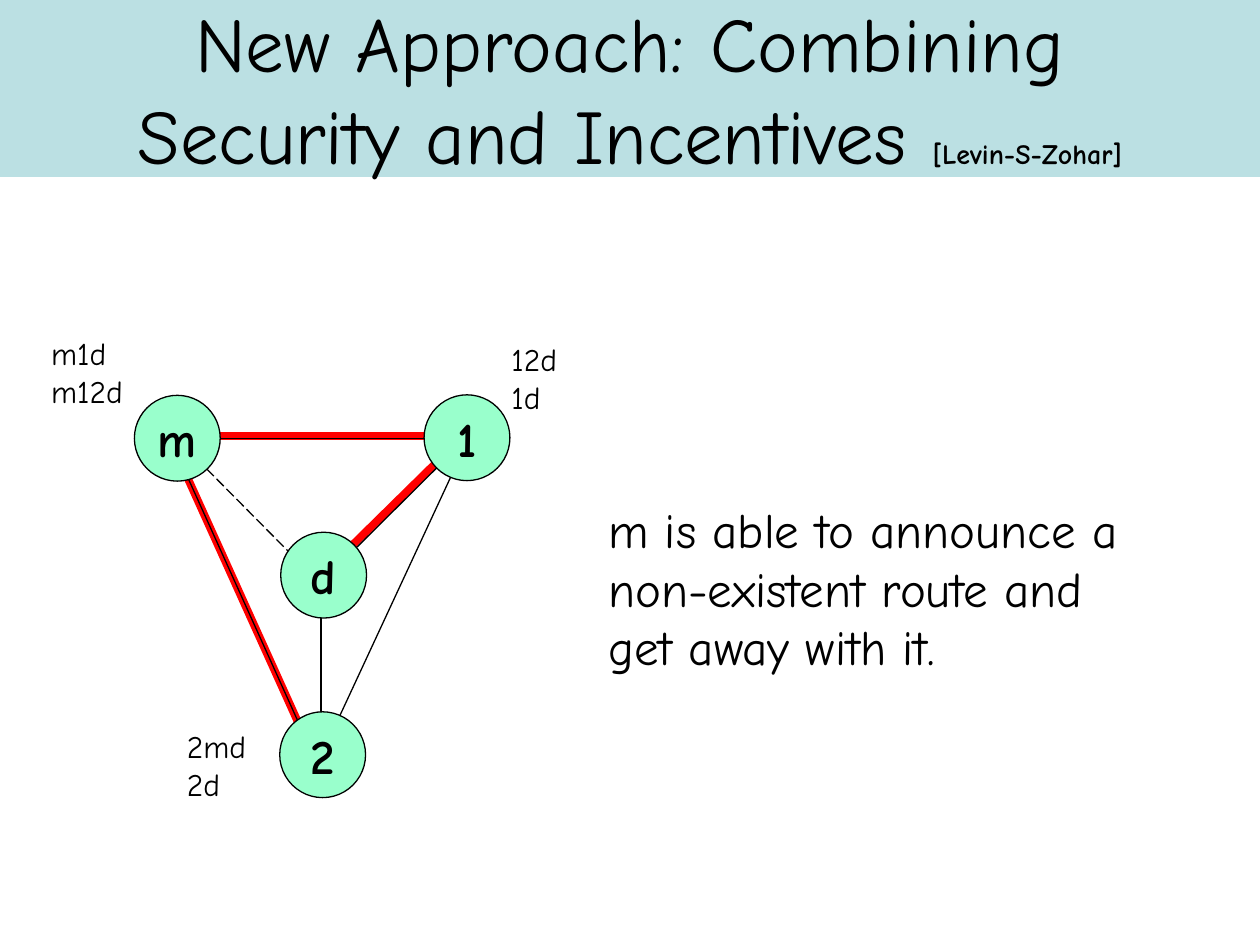
from pptx import Presentation
from pptx.dml.color import RGBColor
from pptx.enum.dml import MSO_LINE
from pptx.enum.shapes import MSO_CONNECTOR, MSO_SHAPE
from pptx.enum.text import MSO_ANCHOR, MSO_AUTO_SIZE, PP_ALIGN
from pptx.oxml.ns import qn
from pptx.util import Cm, Pt
from lxml import etree

STRAIGHT = MSO_CONNECTOR.STRAIGHT
RECTANGLE, OVAL = MSO_SHAPE.RECTANGLE, MSO_SHAPE.OVAL
LONG_DASH = MSO_LINE.LONG_DASH
MIDDLE, CENTER, LEFT = MSO_ANCHOR.MIDDLE, PP_ALIGN.CENTER, PP_ALIGN.LEFT
FIXED = MSO_AUTO_SIZE.NONE

FONT = "Comic Neue"
COLORS = {"band": "BBE0E3", "node": "99FFCC", "route": "FF0000", "ink": "000000"}


def color(name):
    return RGBColor.from_string(COLORS[name])


def add_span(para, text, size, bold=False):
    span = para.add_run()
    span.text = text
    span.font.name = FONT
    span.font.size = Pt(size)
    span.font.bold = bold
    span.font.color.rgb = color("ink")


deck = Presentation()
deck.slide_width, deck.slide_height = Cm(25.4), Cm(19.05)
page = deck.slides.add_slide(deck.slide_layouts[5])
shapes = page.shapes

# Title band, sent behind the title
band = shapes.add_shape(RECTANGLE, Cm(0), Cm(0), Cm(25.4), Cm(3.57))
band.shadow.inherit = False
band.fill.solid()
band.fill.fore_color.rgb = color("band")
band.line.fill.background()
title = shapes.title
title._element.addprevious(band._element)

# Title
title.left, title.top, title.width, title.height = Cm(1.27), Cm(0.18), Cm(22.86), Cm(3.18)
frame = title.text_frame
frame.auto_size = FIXED
frame.word_wrap = True
frame.vertical_anchor = MIDDLE
para = frame.paragraphs[0]
para.alignment = CENTER
add_span(para, "New Approach: Combining Security and Incentives ", 44)
add_span(para, "[Levin-S-Zohar]", 16, bold=True)

# Links: missing link dashed, announced routes red, real links black
links = [
    (3.56, 8.84, 6.5, 11.81, "ink", 0.75, LONG_DASH),
    (3.45, 8.79, 9.4, 8.79, "route", 4.5, None),
    (3.4, 8.79, 6.27, 15.14, "route", 4.5, None),
    (9.32, 8.81, 6.32, 11.76, "route", 4.5, None),
    (3.43, 8.84, 6.3, 15.19, "ink", 0.75, None),
    (6.47, 15.29, 6.47, 11.71, "ink", 0.75, None),
    (9.4, 8.84, 6.43, 11.79, "ink", 0.75, None),
    (3.53, 8.84, 9.47, 8.84, "ink", 0.75, None),
    (6.58, 15.01, 9.47, 8.79, "ink", 0.75, None),
]
for x1, y1, x2, y2, shade, weight, dash in links:
    link = shapes.add_connector(STRAIGHT, Cm(x1), Cm(y1), Cm(x2), Cm(y2))
    link.line.color.rgb = color(shade)
    link.line.width = Pt(weight)
    if dash:
        link.line.dash_style = dash
    etree.SubElement(link._element.spPr, qn("a:effectLst"))

# Nodes
for name, left, top in [("m", 2.71, 7.97), ("1", 8.55, 7.96),
                        ("2", 5.64, 14.35), ("d", 5.66, 10.73)]:
    node = shapes.add_shape(OVAL, Cm(left), Cm(top), Cm(1.73), Cm(1.73))
    node.shadow.inherit = False
    node.fill.solid()
    node.fill.fore_color.rgb = color("node")
    node.line.color.rgb = color("ink")
    node.line.width = Pt(0.75)
    frame = node.text_frame
    frame.word_wrap = False
    frame.vertical_anchor = MIDDLE
    para = frame.paragraphs[0]
    para.alignment = CENTER
    add_span(para, name, 28, bold=True)

# Route preferences beside the nodes, and the conclusion with a wider left margin
texts = [
    (0.78, 6.61, 2.11, 1.78, 0.25, 18, ["m1d", "m12d"]),
    (3.52, 14.53, 1.78, 1.8, 0.25, 18, ["2md", "2d"]),
    (10.06, 6.74, 1.57, 1.78, 0.25, 18, ["12d", "1d"]),
    (11.05, 9.94, 12.07, 4.19, 1.21, 28,
     ["m is able to announce a non-existent route and get away with it."]),
]
for left, top, width, height, margin, size, lines in texts:
    box = shapes.add_textbox(Cm(left), Cm(top), Cm(width), Cm(height))
    frame = box.text_frame
    frame.word_wrap = True
    frame.margin_left = Cm(margin)
    for number, line in enumerate(lines):
        para = frame.add_paragraph() if number else frame.paragraphs[0]
        para.alignment = LEFT
        add_span(para, line, size)

deck.save("out.pptx")
